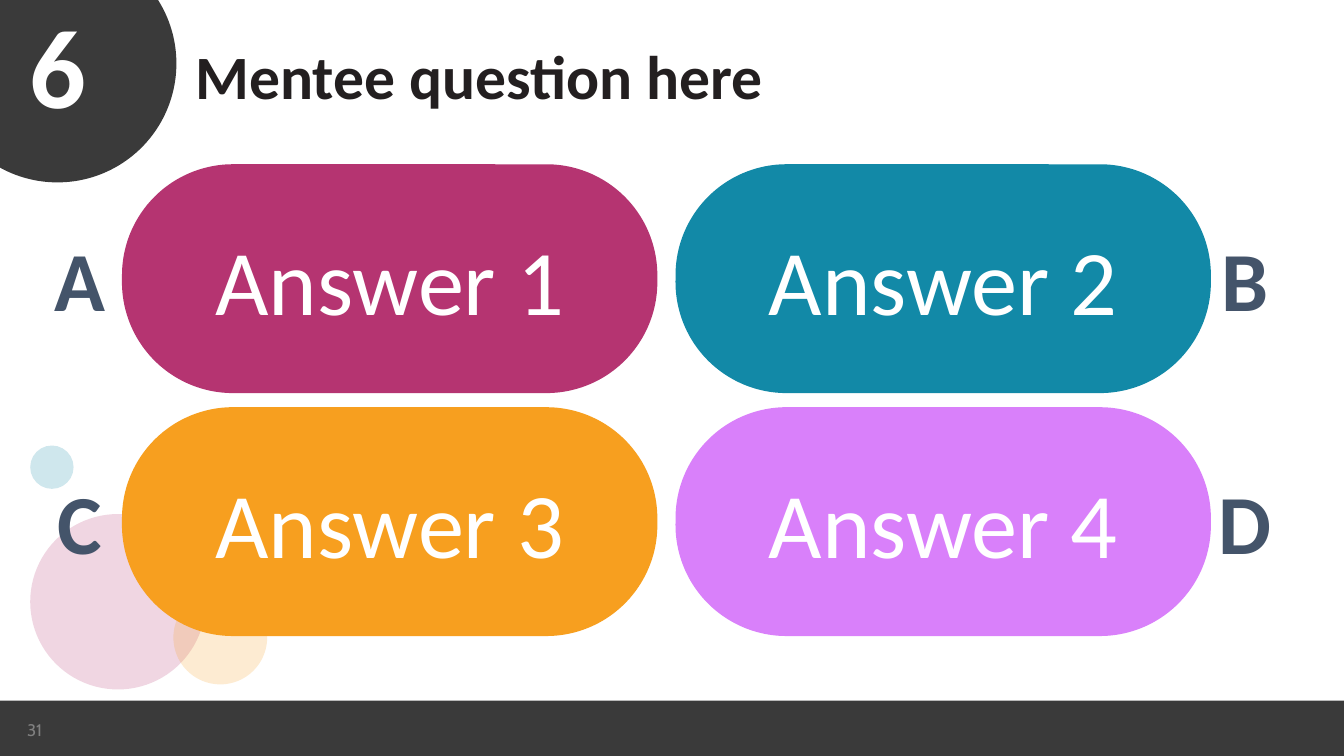
from pptx import Presentation
from pptx.dml.color import RGBColor
from pptx.enum.shapes import MSO_SHAPE as Shape
from pptx.enum.text import MSO_ANCHOR as Anchor, MSO_AUTO_SIZE as AutoSize, PP_ALIGN as Align
from pptx.oxml.ns import qn
from pptx.util import Pt
from lxml import etree

PX = 9144  # 100 px to the inch
COLORS = {
    "bar": "3A3A3A", "pink": "B53471", "teal": "1289A7", "orange": "F79F1F",
    "violet": "D980FA", "letter": "44546A", "title": "231F20",
    "page": "808080", "white": "FFFFFF",
}

prs = Presentation()
prs.slide_width, prs.slide_height = 1333 * PX, 750 * PX
slide = prs.slides.add_slide(prs.slide_layouts[5])


def add_form(kind, box, color, opacity=100):
    form = slide.shapes.add_shape(kind, *[n * PX for n in box])
    form.shadow.inherit = False
    form.fill.solid()
    form.fill.fore_color.rgb = RGBColor.from_string(COLORS[color])
    form.line.fill.background()
    if opacity < 100:
        srgb = form.fill._xPr.find(qn("a:solidFill"))[0]
        etree.SubElement(srgb, qn("a:alpha")).set("val", str(opacity * 1000))
    return form


def write(holder, text, size, color, bold=False, align=Align.CENTER,
          anchor=Anchor.MIDDLE, font="Calibri"):
    frame = holder.text_frame
    frame.text = text
    frame.word_wrap = True
    frame.auto_size = AutoSize.NONE
    frame.vertical_anchor = anchor
    line = frame.paragraphs[0]
    line.alignment = align
    line.font.name, line.font.size, line.font.bold = font, Pt(size), bold
    line.font.color.rgb = RGBColor.from_string(COLORS[color])


# Footer bar and pale bubbles
add_form(Shape.RECTANGLE, (0, 695, 1333, 55), "bar")
for left, top, size, color in [(30, 510, 174, "pink"), (30, 442, 43, "teal"),
                               (172, 586, 93, "orange")]:
    add_form(Shape.OVAL, (left, top, size, size), color, opacity=20)

# Page number
page = slide.shapes.add_textbox(17 * PX, 704 * PX, 300 * PX, 40 * PX)
write(page, "31", 12, "page", align=Align.LEFT, font="Cabin")

# Question
question = slide.shapes.title
question.left, question.top = 184 * PX, 33 * PX
question.width, question.height = 1110 * PX, 84 * PX
write(question, "Mentee question here", 44, "title", bold=True,
      align=Align.LEFT, anchor=Anchor.TOP)

# Answers in a two by two grid, each with its letter on the outer side
answer_colors = ["pink", "teal", "orange", "violet"]
for i, (letter, color) in enumerate(zip("ABCD", answer_colors)):
    row, col = divmod(i, 2)
    top = 163 + 241 * row
    answer = add_form(Shape.ROUNDED_RECTANGLE, (121 + 549 * col, top, 531, 227), color)
    answer.adjustments[0] = 0.485
    write(answer, f"Answer {i + 1}", 66, "white")

    label = slide.shapes.add_textbox((46, 1202)[col] * PX, (top + 58) * PX, 66 * PX, 111 * PX)
    write(label, letter, 60, "letter", bold=True, anchor=Anchor.TOP)
    label.text_frame.word_wrap = False

# Question number in the corner
number = add_form(Shape.OVAL, (-61, -55, 236, 236), "bar")
write(number, "6", 80, "white", bold=True)

prs.save("out.pptx")
